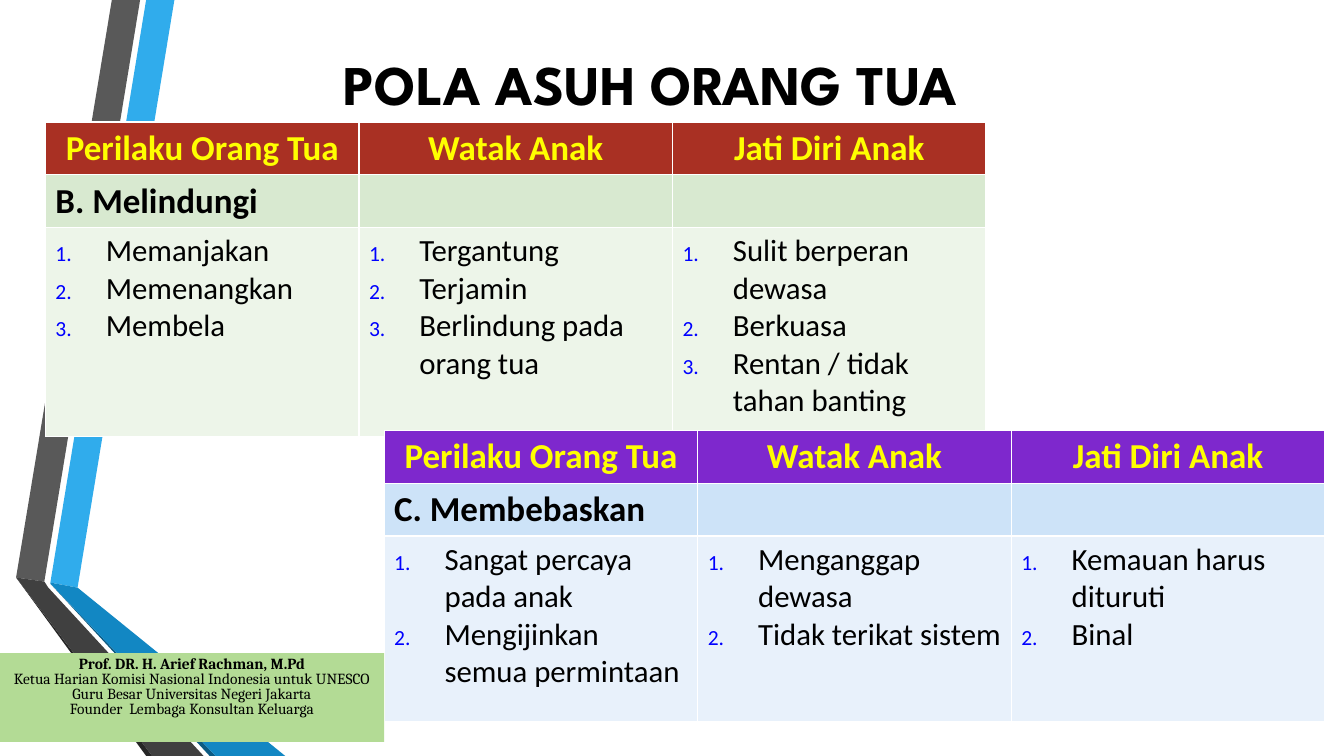
from lxml import etree
from pptx import Presentation
from pptx.dml.color import RGBColor
from pptx.enum.shapes import MSO_SHAPE
from pptx.enum.text import MSO_ANCHOR, PP_ALIGN
from pptx.oxml.ns import qn
from pptx.util import Pt

PX = 9144  # 100 px to the inch
RECT = MSO_SHAPE.RECTANGLE
CENTER, LEFT = PP_ALIGN.CENTER, PP_ALIGN.LEFT
TOP, MIDDLE = MSO_ANCHOR.TOP, MSO_ANCHOR.MIDDLE

BLACK = RGBColor(0x00, 0x00, 0x00)
YELLOW = RGBColor(0xFF, 0xFF, 0x00)
BLUE = RGBColor(0x00, 0x00, 0xFF)
GREEN = RGBColor(0xB3, 0xDB, 0x95)
RED_SET = (RGBColor(0xA9, 0x30, 0x23), RGBColor(0xD8, 0xE9, 0xD0),
           RGBColor(0xED, 0xF5, 0xE9))
VIOLET_SET = (RGBColor(0x7E, 0x28, 0xCD), RGBColor(0xCD, 0xE3, 0xF8),
              RGBColor(0xE8, 0xF1, 0xFB))

TITLE = {"name": "League Spartan", "size": Pt(40), "bold": True}
HEAD = {"name": "Calibri", "size": Pt(25), "bold": True}
ITEM = {"name": "Calibri", "size": Pt(22), "bold": False}
NAME = {"name": "Cambria", "size": Pt(11), "bold": True}
ROLE = {**NAME, "bold": False}

# Ribbon bands, as colour and outline
BANDS = [
    (RGBColor(0x30, 0xAC, 0xEC),
     [(50, 578), (77, 583), (173, 0), (145, 0)]),
    (RGBColor(0x59, 0x59, 0x59),
     [(139, 0), (111, 0), (16, 573), (44, 577)]),
    (RGBColor(0x26, 0x26, 0x26), [(16, 573), (145, 750), (151, 750)]),
    (RGBColor(0x0C, 0x5A, 0x82), [(50, 579), (208, 750), (214, 750)]),
    (RGBColor(0x12, 0x87, 0xC3),
     [(50, 579), (214, 750), (283, 750), (77, 583), (50, 578)]),
    (RGBColor(0x40, 0x40, 0x40),
     [(202, 750), (48, 583), (44, 577), (16, 573), (151, 750)]),
]

COLUMNS = ["Perilaku Orang Tua", "Watak Anak", "Jati Diri Anak"]
PROTECT = [
    ["Memanjakan", "Memenangkan", "Membela"],
    ["Tergantung", "Terjamin", "Berlindung pada orang tua"],
    ["Sulit berperan dewasa", "Berkuasa", "Rentan / tidak tahan banting"],
]
RELEASE = [
    ["Sangat percaya pada anak", "Mengijinkan semua permintaan"],
    ["Menganggap dewasa", "Tidak terikat sistem"],
    ["Kemauan harus dituruti", "Binal"],
]
SPEAKER = [
    "Prof. DR. H. Arief Rachman, M.Pd",
    "Ketua Harian Komisi Nasional Indonesia untuk UNESCO",
    "Guru Besar Universitas Negeri Jakarta",
    "Founder  Lembaga Konsultan Keluarga",
]


def scale(*box):
    return [n * PX for n in box]


def paint(shape, color):
    shape.fill.solid()
    shape.fill.fore_color.rgb = color


def write(para, text, style, color=BLACK, align=LEFT):
    para.alignment = align
    run = para.add_run()
    run.text = text
    for key, value in style.items():
        setattr(run.font, key, value)
    run.font.color.rgb = color


def write_all(frame, lines):
    """Yield each line with its own paragraph."""
    for i, line in enumerate(lines):
        yield frame.add_paragraph() if i else frame.paragraphs[0], line


def number(para):
    """Small blue numbers with a hanging indent."""
    props = para._p.get_or_add_pPr()
    props.set("marL", str(50 * PX))
    props.set("indent", str(-50 * PX))
    tint = etree.SubElement(props, qn("a:buClr"))
    etree.SubElement(tint, qn("a:srgbClr"), val=str(BLUE))
    etree.SubElement(props, qn("a:buSzPct"), val="70000")
    etree.SubElement(props, qn("a:buFont"), typeface="+mj-lt")
    etree.SubElement(props, qn("a:buAutoNum"), type="arabicPeriod")


def add_ribbon(slide, left, top):
    for color, points in BANDS:
        path = slide.shapes.build_freeform(*points[0], scale=PX)
        path.add_line_segments(points[1:])
        band = path.convert_to_shape(*scale(left, top))
        paint(band, color)
        band.line.fill.background()
        band.shadow.inherit = False


def add_title(slide, box):
    title = slide.shapes.title
    title.left, title.top, title.width, title.height = scale(*box)
    frame = title.text_frame
    frame.vertical_anchor = MIDDLE
    write(frame.paragraphs[0], "POLA ASUH ORANG TUA", TITLE, align=CENTER)


def add_grid(slide, box, group, lists, colors):
    left, top, width, height = box
    grid = slide.shapes.add_table(3, 3, *scale(*box)).table
    for row, size in zip(grid.rows, (52, 52, height - 104)):
        row.height = size * PX
    for row, color in enumerate(colors):
        for col in range(3):
            paint(grid.cell(row, col), color)
    for col, head in enumerate(COLUMNS):
        grid.columns[col].width = width * PX // 3
        cell = grid.cell(0, col)
        write(cell.text_frame.paragraphs[0], head, HEAD, YELLOW, CENTER)
        frame = grid.cell(2, col).text_frame
        for para, item in write_all(frame, lists[col]):
            write(para, item, ITEM)
            number(para)
    write(grid.cell(1, 0).text_frame.paragraphs[0], group, HEAD)


def add_speaker(slide, box):
    card = slide.shapes.add_shape(RECT, *scale(*box))
    paint(card, GREEN)
    card.line.fill.background()
    card.shadow.inherit = False
    frame = card.text_frame
    frame.word_wrap = True
    frame.vertical_anchor = TOP
    for para, line in write_all(frame, SPEAKER):
        style = NAME if line == SPEAKER[0] else ROLE
        write(para, line, style, align=CENTER)
        para.line_spacing = 0.8


def main():
    deck = Presentation()
    deck.slide_width, deck.slide_height = scale(1333, 750)
    slide = deck.slides.add_slide(deck.slide_layouts[5])
    add_ribbon(slide, 0, 0)
    add_title(slide, (166, 42, 958, 80))
    add_grid(slide, (45, 121, 933, 311), "B. Melindungi", PROTECT, RED_SET)
    add_grid(slide, (381, 427, 933, 288), "C. Membebaskan", RELEASE,
             VIOLET_SET)
    add_speaker(slide, (0, 648, 381, 88))
    deck.save("out.pptx")


if __name__ == "__main__":
    main()
